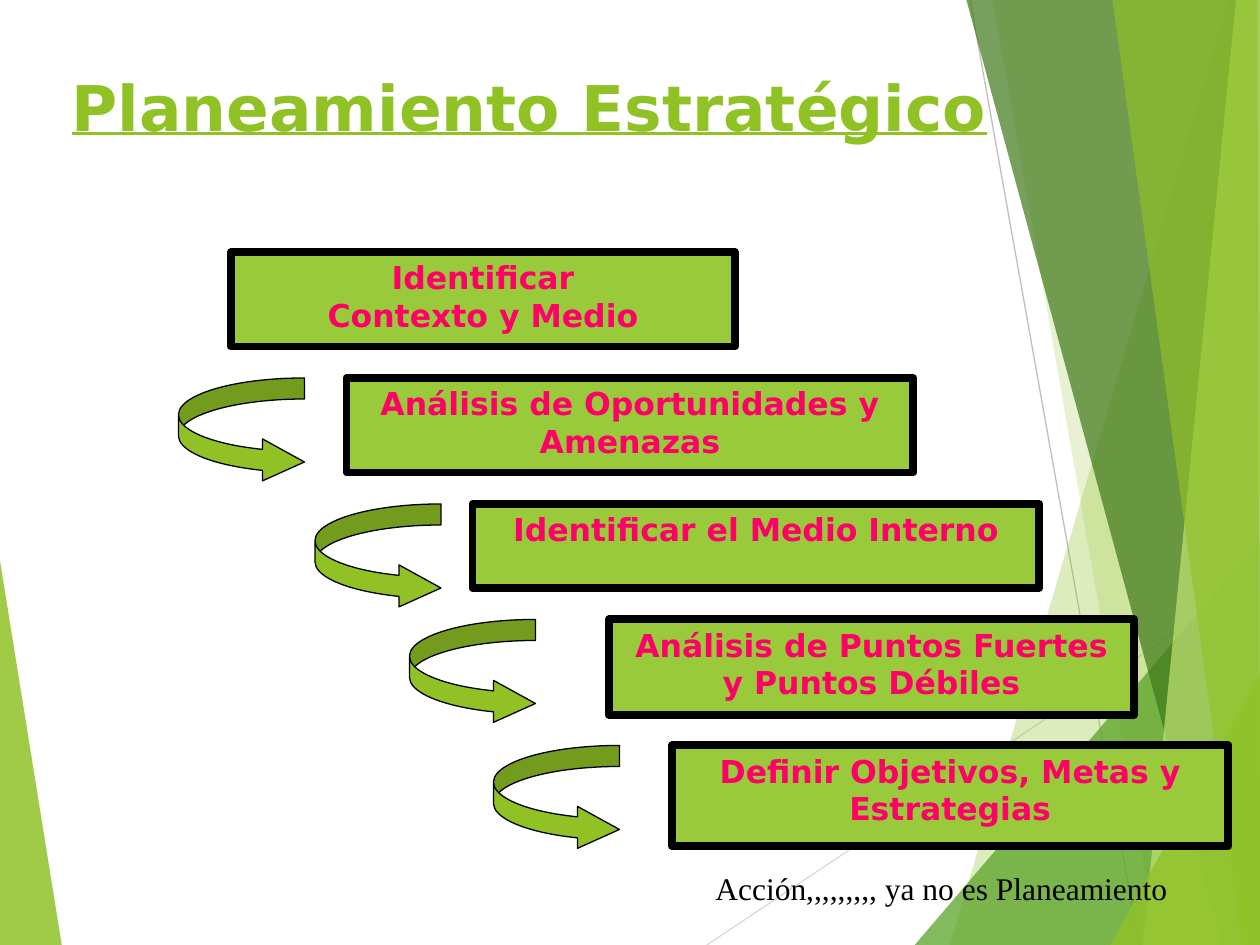
from lxml import etree
from pptx import Presentation
from pptx.dml.color import RGBColor
from pptx.enum.shapes import MSO_CONNECTOR, MSO_SHAPE
from pptx.enum.text import MSO_ANCHOR, MSO_AUTO_SIZE, PP_ALIGN
from pptx.oxml.ns import qn
from pptx.util import Inches, Pt

RECT, ARROW = MSO_SHAPE.RECTANGLE, MSO_SHAPE.CURVED_RIGHT_ARROW
STRAIGHT = MSO_CONNECTOR.STRAIGHT
TOP, LEFT, CENTER = MSO_ANCHOR.TOP, PP_ALIGN.LEFT, PP_ALIGN.CENTER
NO_FIT = MSO_AUTO_SIZE.NONE
W, H = 10, 7.5
UNIT = Inches(1) // 12  # the flow sits on a grid of twelfths of an inch


def paint(color_format, hex_color, alpha=None):
    color_format.rgb = RGBColor.from_string(hex_color)
    if alpha is not None:
        node = color_format._xFill.find(qn("a:srgbClr"))
        etree.SubElement(node, qn("a:alpha")).set("val", str(alpha * 1000))


def write(p, text, color, **fmt):
    r = p.add_run()
    r.text = text
    for name, value in fmt.items():
        setattr(r.font, name, value)
    paint(r.font.color, color)
    return r


prs = Presentation()
prs.slide_width, prs.slide_height = Inches(W), Inches(H)
s = prs.slides.add_slide(prs.slide_layouts[5])

# Background: left wedge, two thin lines, then the overlapping facets
facets = [
    ("90C226", 85, [(0, 4.45), (0.49, H), (0, H)]),
    ("90C226", 30, [(9.75, 0), (7.54, H), (W, H), (W, 0)]),
    ("90C226", 20, [(7.88, 0), (9.19, H), (W, H), (W, 0)]),
    ("54A021", 72, [(7.26, H), (W, 4.29), (W, H)]),
    ("3F7819", 70, [(7.67, 0), (9.7, H), (W, H), (W, 0)]),
    ("C0E474", 70, [(9.81, 0), (9.07, H), (W, H), (W, 0)]),
    ("90C226", 65, [(8.83, 0), (9.86, H), (W, H), (9.98, 0)]),
    ("90C226", 80, [(8.81, H), (W, 5.35), (W, H)]),
]
lines = [("D9D9D9", 5.61, H, W, 4.57), ("BFBFBF", 7.7, 0, 9.04, H)]
for i, (color, alpha, points) in enumerate(facets):
    start, *rest = [(Inches(x), Inches(y)) for x, y in points]
    builder = s.shapes.build_freeform(*start)
    builder.add_line_segments(rest, close=True)
    sp = builder.convert_to_shape()
    sp.shadow.inherit = False
    sp.fill.solid()
    paint(sp.fill.fore_color, color, alpha)
    sp.line.fill.background()
    if i == 0:
        for line_color, *ends in lines:
            line = s.shapes.add_connector(STRAIGHT, *map(Inches, ends))
            line.line.width = Pt(0.75)
            paint(line.line.color, line_color)
            etree.SubElement(line._element.spPr, qn("a:effectLst"))

# Title
title = s.shapes.title
title.left, title.top = Inches(0.12), Inches(0.49)
title.width, title.height = Inches(8.04), Inches(1.26)
tf = title.text_frame
for name, value in {"vertical_anchor": TOP, "auto_size": NO_FIT,
                    "word_wrap": True, "margin_left": Inches(0.45)}.items():
    setattr(tf, name, value)
tf.paragraphs[0].alignment = LEFT
write(tf.paragraphs[0], "Planeamiento Estratégico", "90C226",
      name="DejaVu Sans", size=Pt(36), bold=True, underline=True)

# Steps: left, top, width, height in grid units, paragraphs, arrow's left
steps = [
    (22, 24, 48, 9, ["Identificar", "Contexto y Medio"], None),
    (33, 36, 54, 9, ["Análisis de Oportunidades y Amenazas"], 17),
    (45, 48, 54, 8, ["Identificar el Medio Interno"], 30),
    (58, 59, 50, 9.1, ["Análisis de Puntos Fuertes y Puntos Débiles"], 39),
    (64, 71, 53, 9.6, ["Definir Objetivos, Metas y Estrategias"], 47),
]
for x, y, w, h, paragraphs, arrow_x in steps:
    parts = [(RECT, (x, y, w, h), "99CA3C", 4.5)]
    if arrow_x is not None:
        parts.append((ARROW, (arrow_x, y, 12, 10), "90C226", 0.75))
    for kind, cells, fill, weight in parts:
        sp = s.shapes.add_shape(kind, *(round(c * UNIT) for c in cells))
        sp.shadow.inherit = False
        sp.fill.solid()
        paint(sp.fill.fore_color, fill)
        sp.line.width = Pt(weight)
        paint(sp.line.color, "000000")
        if kind == ARROW:
            for i, value in enumerate((0.2, 0.4, 0.4)):
                sp.adjustments[i] = value
            continue
        tf = sp.text_frame
        tf.word_wrap, tf.vertical_anchor = True, TOP
        for i, text in enumerate(paragraphs):
            p = tf.add_paragraph() if i else tf.paragraphs[0]
            p.alignment = CENTER
            write(p, text, "FF0066", name="DejaVu Sans", size=Pt(18), bold=True)

# Closing remark
tf = s.shapes.add_textbox(*map(Inches, (5.58, 6.85, 4, 0.4))).text_frame
tf.word_wrap = True
write(tf.paragraphs[0], "Acción,,,,,,,,, ya no es Planeamiento", "000000",
      name="Times New Roman", size=Pt(18))

prs.save("out.pptx")
